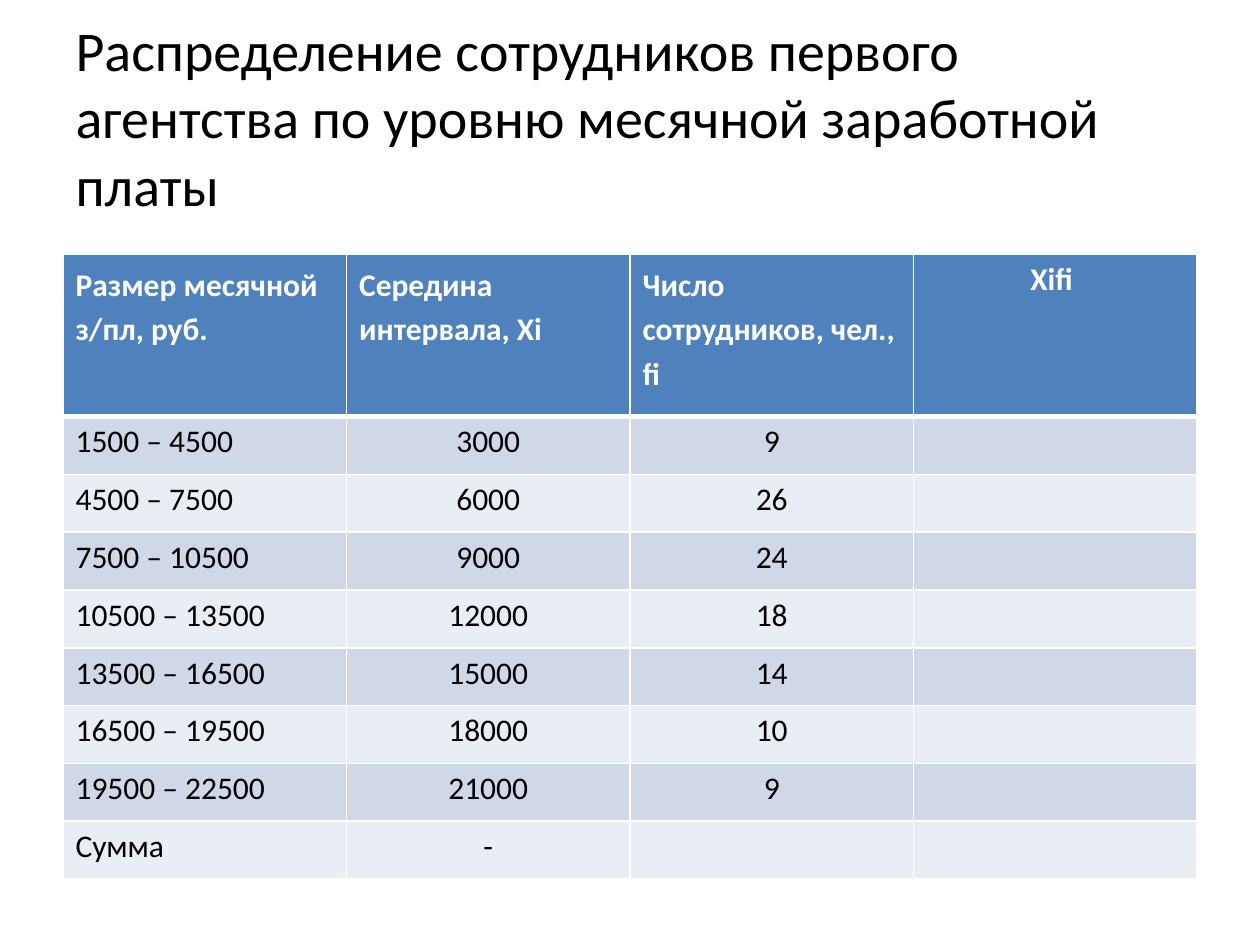
import pptx
import pptx.util
import pptx.dml.color
import pptx.enum.text
import pptx.oxml
import pptx.oxml.ns
import lxml.etree

Pt = pptx.util.Pt
ALIGN = pptx.enum.text.PP_ALIGN
ANCHOR = pptx.enum.text.MSO_ANCHOR

# Content
TITLE = "Распределение сотрудников первого агентства по уровню месячной заработной платы"
HEADERS = ["Размер месячной з/пл, руб.", "Середина интервала, Xi",
           "Число сотрудников, чел., fi", "Xifi "]
ROWS = [
    ("1500 – 4500", "3000", "9", ""),
    ("4500 – 7500", "6000", "26", ""),
    ("7500 – 10500", "9000", "24", ""),
    ("10500 – 13500", "12000", "18", ""),
    ("13500 – 16500", "15000", "14", ""),
    ("16500 – 19500", "18000", "10", ""),
    ("19500 – 22500", "21000", "9", ""),
    ("Сумма", "-", "", ""),
]

# Format
COLORS = {"text": "000000", "white": "FFFFFF", "header": "4F81BD",
          "odd": "D0D8E8", "even": "E9EDF4"}
TITLE_FONT = {"name": "Calibri", "size": Pt(32), "bold": False}
HEAD_FONT = {"name": "Calibri", "size": Pt(18), "bold": True}
BODY_FONT = {"name": "Calibri", "size": Pt(18), "bold": False}
LEFT, WIDTH = 36, 648
TABLE_TOP, HEAD_H, ROW_H = 145.5, 92.6, 33.05


def rgb(key):
    return pptx.dml.color.RGBColor.from_string(COLORS[key])


def write(tf, text, font, color, align, spacing=None):
    p = tf.paragraphs[0]
    p.alignment = align
    p.line_spacing = spacing
    r = p.add_run()
    r.text = text
    for name, value in font.items():
        setattr(r.font, name, value)
    r.font.color.rgb = rgb(color)


def set_borders(cell, bottom):
    tc_pr = cell._tc.get_or_add_tcPr()
    sides = {"lnL": 1, "lnR": 1, "lnT": 1, "lnB": bottom}
    for i, (tag, width) in enumerate(sides.items()):
        ln = lxml.etree.Element(pptx.oxml.ns.qn("a:" + tag), w=str(Pt(width)))
        fill = lxml.etree.SubElement(ln, pptx.oxml.ns.qn("a:solidFill"))
        lxml.etree.SubElement(fill, pptx.oxml.ns.qn("a:srgbClr"), val=COLORS["white"])
        tc_pr.insert(i, ln)


prs = pptx.Presentation()
prs.slide_width, prs.slide_height = Pt(720), Pt(540)
s = prs.slides.add_slide(prs.slide_layouts[5])

# Title
sp = s.shapes.title
sp.left, sp.top, sp.width, sp.height = Pt(LEFT), Pt(21.6), Pt(WIDTH), Pt(90)
tf = sp.text_frame
for name, value in {"word_wrap": True, "vertical_anchor": ANCHOR.MIDDLE,
                    "auto_size": pptx.enum.text.MSO_AUTO_SIZE.NONE}.items():
    setattr(tf, name, value)
write(tf, TITLE, TITLE_FONT, "text", ALIGN.LEFT)

# Salary table
n_cols = len(HEADERS)
table = s.shapes.add_table(len(ROWS) + 1, n_cols, Pt(LEFT), Pt(TABLE_TOP), Pt(WIDTH),
                           Pt(HEAD_H + ROW_H * len(ROWS))).table
for col in table.columns:
    col.width = Pt(WIDTH / n_cols)
for i, values in enumerate([HEADERS] + ROWS):
    head = i == 0
    table.rows[i].height = Pt(HEAD_H if head else ROW_H)
    for j, text in enumerate(values):
        cell = table.cell(i, j)
        cell.fill.solid()
        cell.fill.fore_color.rgb = rgb("header" if head else "odd" if i % 2 else "even")
        # The thick rule under the header belongs to both rows it separates
        set_borders(cell, 3 if head else 1)
        if i == 1:
            cell._tc.tcPr.find(pptx.oxml.ns.qn("a:lnT")).set("w", str(Pt(3)))
        if not text:
            continue
        if head:
            last = j == n_cols - 1
            write(cell.text_frame, text, HEAD_FONT, "white",
                  ALIGN.CENTER if last else ALIGN.LEFT, None if last else 1.15)
        else:
            write(cell.text_frame, text, BODY_FONT, "text",
                  ALIGN.CENTER if j else ALIGN.LEFT)

prs.save("out.pptx")
